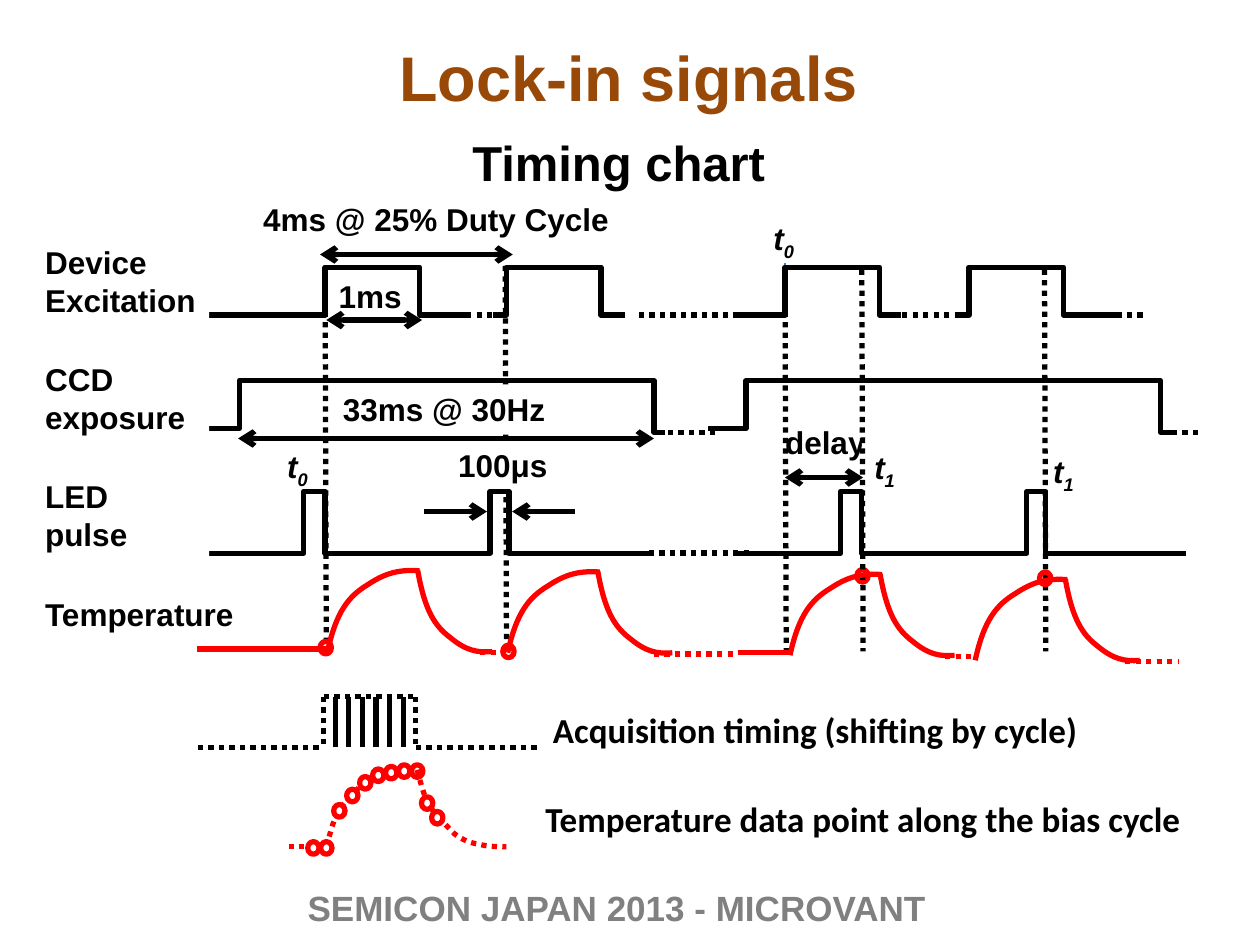
from dataclasses import dataclass
from itertools import pairwise

from lxml.etree import SubElement
from pptx import Presentation
from pptx.dml.color import RGBColor
from pptx.enum.dml import MSO_LINE
from pptx.enum.shapes import MSO_CONNECTOR as Connector, MSO_SHAPE as Preset
from pptx.enum.text import MSO_ANCHOR as Anchor, MSO_AUTO_SIZE as AutoSize, PP_ALIGN as Align
from pptx.oxml.ns import qn
from pptx.util import Inches, Pt

COLUMNS, ROWS = 100, 75  # grid over the slide; every length below counts its cells


@dataclass(frozen=True)
class Theme:
    font: str = "Arial"
    note_font: str = "Calibri"
    title: str = "984807"
    ink: str = "000000"
    heat: str = "FF0000"
    paper: str = "FFFFFF"
    footer: str = "808080"
    leader: str = "4B7EBC"
    title_size: int = 36
    subtitle_size: int = 28
    note_size: int = 20
    label_size: int = 18
    stroke: float = 3
    thin: float = 0.75


@dataclass(frozen=True)
class Cycle:
    """One excitation pulse, the heating that follows it, and the dotted pauses after both."""
    rise: float
    lead: float
    trail: float
    pause: tuple
    heat_start: tuple
    heat_pause: tuple


@dataclass(frozen=True)
class Span:
    """A two-headed arrow from left to right with its caption box."""
    caption: str
    left: float
    right: float
    y: float
    box: tuple
    align: Align = Align.CENTER


# Excitation and temperature
EXCITATION_LOW, EXCITATION_HIGH, EXCITATION_WIDTH = 25, 21.2, 7.5
CYCLES = (Cycle(25.8, 10, 4, (37, 39.5), (26, 51.7), (38.1, 40.7)),
          Cycle(40.2, 1.1, 1.9, (50.7, 58.5), (40.3, 51.8), (51.9, 58.5)),
          Cycle(62.3, 3.8, 1.7, (71.6, 75.9), (62.7, 52), (75, 77.6)),
          Cycle(76.9, 1, 4.3, (88.6, 91.1), (77.4, 52.4), (89.3, 93.5)))
HEATING = [(0, 0), (0.7, -3.2), (1.7, -4.4), (3.2, -5.3), (4.7, -6.3), (5.8, -6.5), (7.3, -6.4)]
COOLING = [(0.81 * x, -1.01 * y) for x, y in HEATING]  # heating turned over and quicker

# Camera frames and LED pulses
FRAME_LOW, FRAME_END, FRAME_HIGH, FRAME_WIDTH = 34, 34.3, 30.2, 32.9
FRAME_RISES, FRAME_PAUSES = (19, 59.2), ((53, 56.8), (93, 95.5))
LED_LOW, LED_HIGH, LED_REPEAT = 43.9, 39, 42.6
LED_EDGES = (15.7, 24.1, 25.8, 38.9, 40.4, 51.5)

SPANS = (Span("4ms @ 25% Duty Cycle", 25.4, 40.7, 20.2, (19.9, 15.4, 29.7), Align.LEFT),
         Span("1ms", 25.9, 33.5, 25.4, (25.9, 21.5, 7.3), Align.LEFT),
         Span("33ms @ 30Hz", 18.9, 51.9, 34.8, (26.1, 30.5, 18.3)),
         Span("delay", 62.3, 68.5, 37.9, (60.4, 33.1, 10.2)))
SIGNAL_NAMES = ("Device Excitation", "CCD exposure", "LED pulse", "Temperature")
LABEL_HEIGHT = 4

# Acquisition window and the curve sampled through it
WINDOW_LEFT, WINDOW_RIGHT, WINDOW_TOP, WINDOW_BASE = 25.7, 33, 55.3, 59.3
SAMPLED_START, SAMPLED_PEAK = (25.9, 67.2), (33.1, 61.1)
SAMPLED_RISE = [(0, 0), (0.3, -1), (0.5, -2), (1, -2.9), (1.6, -3.7), (2.4, -4.5), (3, -5.1),
                (3.7, -5.6), (4.2, -5.8), (4.9, -5.9), (5.6, -6.1), (6.4, -6.1), (7.1, -6.1)]
SAMPLED_FALL = [(x, -y) for x, y in SAMPLED_RISE]


def rgb(code):
    return RGBColor.from_string(code)


def height_at(curve, x):
    """Height of a curve at x; level beyond its ends."""
    for (x1, y1), (x2, y2) in pairwise(curve):
        if x1 <= x <= x2:
            return y1 + (y2 - y1) * (x - x1) / (x2 - x1)
    return curve[0][1] if x < 0 else curve[-1][1]


def write_run(paragraph, text, *, size, color, font, italic=False, subscript=False):
    run = paragraph.add_run()
    run.text = text
    run.font.size, run.font.name, run.font.bold = Pt(size), font, True
    run.font.color.rgb = rgb(color)
    if italic:
        run.font.italic = True
    if subscript:
        run.font._element.set("baseline", "-25000")


class SlideBuilder:
    def __init__(self, presentation, theme):
        self.theme = theme
        self.shapes = presentation.slides.add_slide(presentation.slide_layouts[6]).shapes
        self.column = presentation.slide_width / COLUMNS
        self.row = presentation.slide_height / ROWS

    def place(self, x, y):
        return round(x * self.column), round(y * self.row)

    def style_line(self, line, color, width=None, dotted=False):
        line.color.rgb = rgb(color or self.theme.ink)
        line.width = Pt(width or self.theme.stroke)
        if dotted:
            line.dash_style = MSO_LINE.ROUND_DOT

    def paint(self, shape, filled):
        if filled:
            shape.fill.solid()
            shape.fill.fore_color.rgb = rgb(self.theme.paper)
        else:
            shape.fill.background()

    def text(self, content, x, y, w, h, *, subscript="", size=None, color=None, font=None,
             align=Align.LEFT, wrap=True, grow=True, anchor=Anchor.TOP, backed=False):
        box = self.shapes.add_textbox(*self.place(x, y), *self.place(w, h))
        self.paint(box, backed)
        frame = box.text_frame
        frame.word_wrap, frame.vertical_anchor = wrap, anchor
        frame.auto_size = AutoSize.SHAPE_TO_FIT_TEXT if grow else AutoSize.NONE
        paragraph = frame.paragraphs[0]
        paragraph.alignment = align
        look = dict(size=size or self.theme.label_size, color=color or self.theme.ink,
                    font=font or self.theme.font, italic=bool(subscript))
        write_run(paragraph, content, **look)
        if subscript:
            write_run(paragraph, subscript, subscript=True, **look)
        return box

    def line(self, x1, y1, x2, y2, *, heads=(), **look):
        rule = self.shapes.add_connector(Connector.STRAIGHT, *self.place(x1, y1), *self.place(x2, y2))
        self.style_line(rule.line, look.pop("color", None), **look)
        properties = rule._element.spPr
        for end in heads:
            SubElement(properties.find(qn("a:ln")), qn(f"a:{end}"), type="arrow")
        SubElement(properties, qn("a:effectLst"))
        return rule

    def level(self, left, right, y, **look):
        return self.line(left, y, right, y, **look)

    def outline(self, points, *, color=None, dotted=False):
        first, *rest = [self.place(*point) for point in points]
        builder = self.shapes.build_freeform(*first)
        builder.add_line_segments(rest, close=False)
        trace = builder.convert_to_shape()
        trace.shadow.inherit = False
        self.paint(trace, False)
        self.style_line(trace.line, color, dotted=dotted)
        return trace

    def square_wave(self, low, high, edges, end_low=None):
        """Start low at the first x, toggle at each inner x, stop low at the last."""
        levels = [high if i % 2 else low for i in range(len(edges) - 1)]
        levels[-1] = end_low or low
        self.outline([(x, y) for ends, y in zip(pairwise(edges), levels) for x in ends])

    def curve(self, start, offsets, dotted=False):
        trace = self.outline([(start[0] + dx, start[1] + dy) for dx, dy in offsets],
                             color=self.theme.heat, dotted=dotted)
        route = trace._element.find(".//" + qn("a:path"))
        segments = route.findall(qn("a:lnTo"))
        for index, segment in enumerate(segments):  # three points make a Bezier segment
            if index % 3 == 0:
                bezier = SubElement(route, qn("a:cubicBezTo"))
            bezier.append(segment[0])
            route.remove(segment)

    def marker(self, x, y, filled=True):
        dot = self.shapes.add_shape(Preset.OVAL, *self.place(x - 0.45, y - 0.5), *self.place(0.9, 1))
        dot.shadow.inherit = False
        self.paint(dot, filled)
        self.style_line(dot.line, self.theme.heat)


def build_headings(page, theme):
    centred = dict(align=Align.CENTER, anchor=Anchor.MIDDLE, grow=False)
    page.text("Lock-in signals", 12.8, 1.1, 74.2, 9.9, size=theme.title_size, color=theme.title, **centred)
    page.text("Timing chart", 36.5, 10, 25.5, 5.7, size=theme.subtitle_size, wrap=False)
    page.text("SEMICON JAPAN 2013 - MICROVANT", 19.1, 70, 59.7, 4, size=theme.note_size,
              color=theme.footer, **centred)


def build_acquisition(page, theme):
    # Window with its gates
    page.level(WINDOW_LEFT - 10, WINDOW_LEFT, WINDOW_BASE, dotted=True)
    page.level(WINDOW_RIGHT, WINDOW_RIGHT + 10, WINDOW_BASE, dotted=True)
    page.level(WINDOW_LEFT, WINDOW_RIGHT, WINDOW_TOP, dotted=True)
    gates = [WINDOW_LEFT + 0.9 + 1.08 * step for step in range(6)]
    for x in (WINDOW_LEFT, *gates, WINDOW_RIGHT):
        page.line(x, WINDOW_TOP, x, WINDOW_BASE, dotted=x not in gates)

    # Sampled curve with its data points
    start_x, start_y = SAMPLED_START
    page.level(start_x - 3, start_x, start_y, color=theme.heat, dotted=True)
    for start, curve, spacing, steps in ((SAMPLED_START, SAMPLED_RISE, 1.03, range(-1, 8)),
                                         (SAMPLED_PEAK, SAMPLED_FALL, 0.8, range(1, 3))):
        page.curve(start, curve, dotted=True)
        for step in steps:
            offset = spacing * step
            page.marker(start[0] + offset, start[1] + height_at(curve, offset) + 0.1)

    note = dict(size=theme.note_size, font=theme.note_font, wrap=False)
    page.text("Temperature data point along the bias cycle", 42.3, 62.8, 52.8, 4.4, **note)
    page.text("Acquisition timing (shifting by cycle)", 42.9, 55.7, 44.1, 4.4, **note)


def build_captions(page, theme):
    for span in SPANS:
        page.text(span.caption, *span.box, LABEL_HEIGHT, align=span.align, backed=True)
    page.text("100μs", 34.8, 34.9, 10.2, LABEL_HEIGHT, align=Align.CENTER, backed=True)
    instants = [page.text("t", x, y, 3.8, LABEL_HEIGHT, subscript=index, wrap=False, backed=True)
                for index, x, y in (("0", 60.4, 16.9), ("0", 21.8, 35), ("1", 68.4, 35.1), ("1", 82.6, 35.4))]
    leader = page.line(62.3, 21, 62.3, EXCITATION_LOW, color=theme.leader, width=theme.thin)
    leader.begin_connect(instants[0], 2)


def build_signals(page):
    for cycle in CYCLES:
        fall = cycle.rise + EXCITATION_WIDTH
        page.square_wave(EXCITATION_LOW, EXCITATION_HIGH,
                         (cycle.rise - cycle.lead, cycle.rise, fall, fall + cycle.trail))
        page.level(*cycle.pause, EXCITATION_LOW, dotted=True)
    for rise, pause in zip(FRAME_RISES, FRAME_PAUSES):
        fall = rise + FRAME_WIDTH
        page.square_wave(FRAME_LOW, FRAME_HIGH, (rise - 3, rise, fall, fall + 0.9), FRAME_END)
        page.level(*pause, FRAME_END, dotted=True)
    for shift in (0, LED_REPEAT):
        page.square_wave(LED_LOW, LED_HIGH, [x + shift for x in LED_EDGES])
    page.level(LED_EDGES[-1], LED_EDGES[0] + LED_REPEAT + 1.5, LED_LOW, dotted=True)
    for row, name in enumerate(SIGNAL_NAMES):
        one_line = name == "Temperature"
        page.text(name, 2.6, 18.8 + 9.3 * row, 17.9 if one_line else 14,
                  LABEL_HEIGHT if one_line else 7.1, backed=True)


def build_timing_marks(page):
    # Guides at the excitation starts and at the ends of the later LED pulses
    for x in (CYCLES[0].rise, CYCLES[2].rise, 68.4, 82.9):
        page.line(x, 21.4, x + 0.1, 51.7, dotted=True)
    for span in SPANS:
        page.level(span.left, span.right, span.y, heads=("headEnd", "tailEnd"))
    pulse_left, pulse_right = LED_EDGES[3:5]
    for edge, outward in ((pulse_left, -1), (pulse_right, 1)):
        tip = edge + 0.25 * outward
        page.level(tip + 5 * outward, tip, 40.6, heads=("tailEnd",))


def build_temperature(page, theme):
    page.level(15.6, 26.1, 51.5, color=theme.heat)
    page.level(58.6, 62.7, 51.8, color=theme.heat)
    for cycle in CYCLES:
        x, y = cycle.heat_start
        page.curve((x, y), HEATING)
        page.curve((x + 7.15, y - 6.45), COOLING)
        page.level(*cycle.heat_pause, y + 0.1, color=theme.heat, dotted=True)
    for instant in ((82.95, 45.9), (40.35, 51.7), (25.85, 51.4)):
        page.marker(*instant, filled=False)


def main():
    presentation = Presentation()
    presentation.slide_width, presentation.slide_height = Inches(10), Inches(7.5)
    theme = Theme()
    page = SlideBuilder(presentation, theme)
    build_headings(page, theme)
    build_acquisition(page, theme)
    page.marker(68.45, 45.7)
    page.line(40.1, 21.1, 40.2, 51.5, dotted=True)  # guide running behind the captions
    build_captions(page, theme)
    build_signals(page)
    build_timing_marks(page)
    build_temperature(page, theme)
    presentation.save("out.pptx")


if __name__ == "__main__":
    main()
